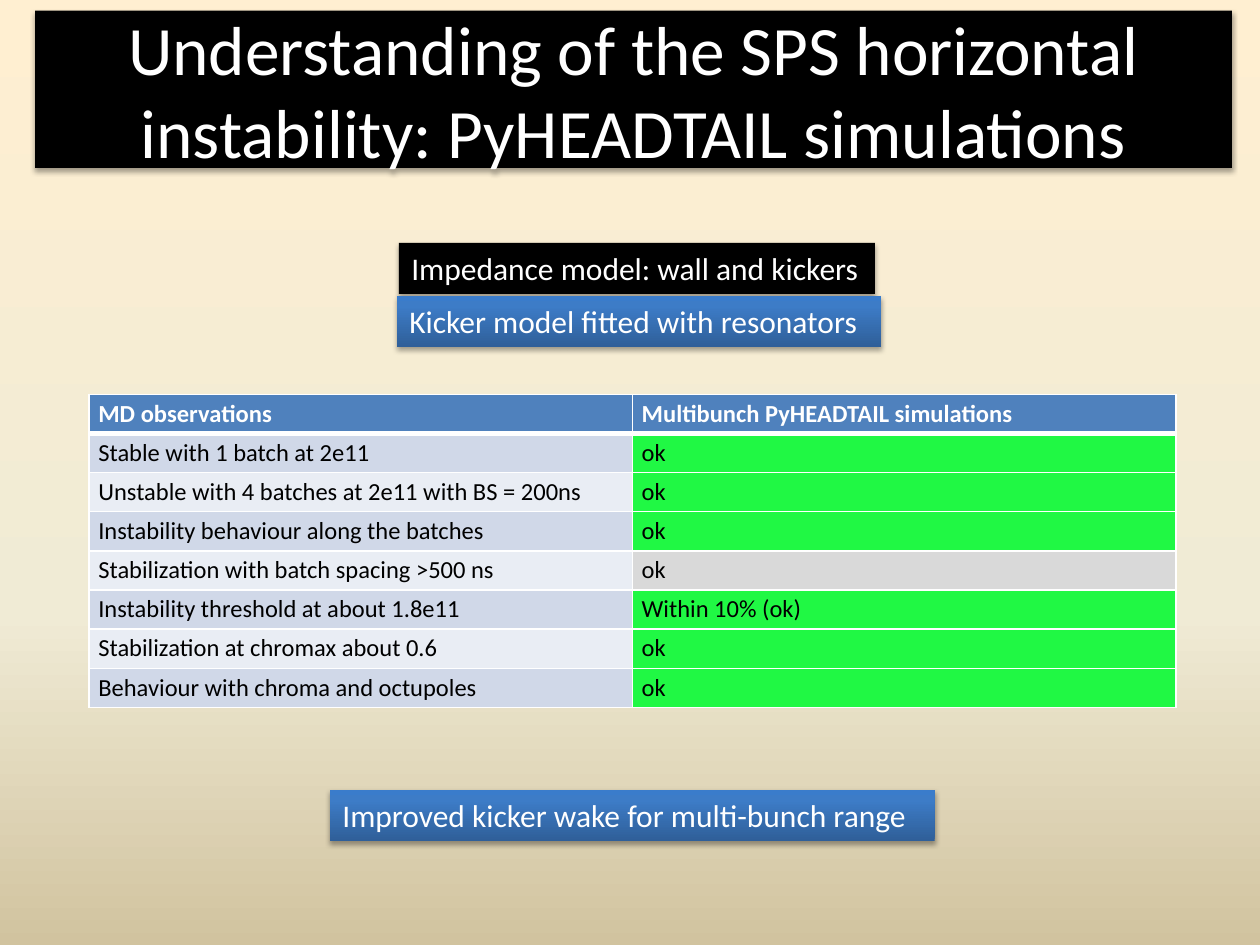
from lxml.etree import SubElement
from pptx import Presentation
from pptx.dml.color import RGBColor
from pptx.enum.text import MSO_ANCHOR, MSO_AUTO_SIZE, PP_ALIGN
from pptx.oxml.ns import qn
from pptx.util import Pt

FONT = "Calibri"
COLORS = {
    "black": "000000", "white": "FFFFFF", "header": "4F81BD",
    "band_dark": "D0D8E8", "band_light": "E9EDF4",
    "confirmed": "20F844", "neutral": "D9D9D9",
    "sand_top": "FFEFD1", "sand_mid": "F0EBD5", "sand_bottom": "D1C39F",
    "blue_dark": "2F5F99", "blue_mid": "3D7CC7", "blue_light": "3A7CCB",
}
SAND = [(0, "sand_top"), (65, "sand_mid"), (100, "sand_bottom")]
BLUE = [(0, "blue_dark"), (80, "blue_mid"), (100, "blue_light")]

HEADINGS = ("MD observations", "Multibunch PyHEADTAIL simulations")
FINDINGS = [
    ("Stable with 1 batch at 2e11", "ok", "confirmed"),
    ("Unstable with 4 batches at 2e11 with BS = 200ns", "ok", "confirmed"),
    ("Instability behaviour along the batches", "ok", "confirmed"),
    ("Stabilization with batch spacing >500 ns", "ok", "neutral"),
    ("Instability threshold at about 1.8e11", "Within 10% (ok)", "confirmed"),
    ("Stabilization at chromax about 0.6", "ok", "confirmed"),
    ("Behaviour with chroma and octupoles", "ok", "confirmed"),
]


def rgb(name):
    return RGBColor.from_string(COLORS[name])


def add_color(parent, name):
    return SubElement(parent, qn("a:srgbClr"), val=COLORS[name])


def set_gradient(fill, properties, stops, angle):
    """Replace the fill in the given properties element by a linear gradient."""
    fill.solid()
    solid = properties.find(qn("a:solidFill"))
    gradient = solid.makeelement(qn("a:gradFill"), {"rotWithShape": "1"})
    stop_list = SubElement(gradient, qn("a:gsLst"))
    for position, name in stops:
        add_color(SubElement(stop_list, qn("a:gs"), pos=str(position * 1000)), name)
    SubElement(gradient, qn("a:lin"), ang=str(angle * 60000), scaled="0")
    properties.replace(solid, gradient)


def add_shadow(shape):
    effects = SubElement(shape._element.spPr, qn("a:effectLst"))
    shadow = SubElement(effects, qn("a:outerShdw"), blurRad=str(Pt(3.1)),
                        dist=str(Pt(1.8)), dir="5400000", rotWithShape="0")
    SubElement(add_color(shadow, "black"), qn("a:alpha"), val="35000")


def style_text(paragraph, size, color, bold=False):
    font = paragraph.font
    font.name, font.size, font.bold = FONT, Pt(size), bold
    font.color.rgb = rgb(color)


def paint_background(slide):
    fill = slide.background.fill
    fill.solid()
    properties = slide._element.cSld.find(qn("p:bg")).find(qn("p:bgPr"))
    set_gradient(fill, properties, SAND, 90)


def place_title(slide, left, top, width, height):
    title = slide.shapes.title
    title.left, title.top, title.width, title.height = map(Pt, (left, top, width, height))
    title.fill.solid()
    title.fill.fore_color.rgb = rgb("black")
    add_shadow(title)
    frame = title.text_frame
    frame.text = "Understanding of the SPS horizontal instability: PyHEADTAIL simulations"
    frame.auto_size = MSO_AUTO_SIZE.NONE
    frame.vertical_anchor = MSO_ANCHOR.MIDDLE
    frame.paragraphs[0].alignment = PP_ALIGN.CENTER
    style_text(frame.paragraphs[0], 39.6, "white")


def add_label(slide, text, left, top, width, height=29.1, gradient=None):
    label = slide.shapes.add_textbox(*map(Pt, (left, top, width, height)))
    if gradient:
        set_gradient(label.fill, label._element.spPr, gradient, 270)
    else:
        label.fill.solid()
        label.fill.fore_color.rgb = rgb("black")
    add_shadow(label)
    frame = label.text_frame
    frame.text = text
    frame.word_wrap = True
    frame.auto_size = MSO_AUTO_SIZE.SHAPE_TO_FIT_TEXT
    style_text(frame.paragraphs[0], 18, "white")


def fill_cell(cell, text, fill, color="black", bold=False, bottom_line=1):
    cell.text = text
    cell.margin_left = cell.margin_right = Pt(5.2)
    cell.margin_top = cell.margin_bottom = Pt(2.6)
    style_text(cell.text_frame.paragraphs[0], 14, color, bold)
    # Borders come before the fill in the cell properties
    properties = cell._tc.get_or_add_tcPr()
    for side, weight in (("L", 1), ("R", 1), ("T", 1), ("B", bottom_line)):
        line = SubElement(properties, qn(f"a:ln{side}"), w=str(Pt(weight)))
        add_color(SubElement(line, qn("a:solidFill")), "white")
    cell.fill.solid()
    cell.fill.fore_color.rgb = rgb(fill)


def add_findings(slide, left, top, width, height):
    row_count = len(FINDINGS) + 1
    table = slide.shapes.add_table(row_count, 2, *map(Pt, (left, top, width, height))).table
    table.horz_banding = False
    for row in table.rows:
        row.height = Pt(height / row_count)
    for column, heading in enumerate(HEADINGS):
        fill_cell(table.cell(0, column), heading, "header", "white", True, 3)
    for row, (observation, result, status) in enumerate(FINDINGS, 1):
        line = 1
        fill_cell(table.cell(row, 0), observation,
                  "band_dark" if row % 2 else "band_light", bottom_line=line)
        fill_cell(table.cell(row, 1), result, status, bottom_line=line)
        if row == 1:  # keep the thick rule under the headings
            for cell in table.rows[row].cells:
                cell._tc.tcPr.find(qn("a:lnT")).set("w", str(Pt(3)))


def main():
    presentation = Presentation()
    presentation.slide_width, presentation.slide_height = Pt(720), Pt(540)
    slide = presentation.slides.add_slide(presentation.slide_layouts[5])
    paint_background(slide)
    add_findings(slide, 51, 225.3, 621, 179)
    # Impedance model above the table, improvement below
    add_label(slide, "Impedance model: wall and kickers", 228, 138.8, 272)
    add_label(slide, "Kicker model fitted with resonators", 226.8, 169, 276.6, gradient=BLUE)
    place_title(slide, 20, 6, 684, 90)
    add_label(slide, "Improved kicker wake for multi-bunch range", 188.6, 451.3, 345.6,
              gradient=BLUE)
    presentation.save("out.pptx")


if __name__ == "__main__":
    main()
